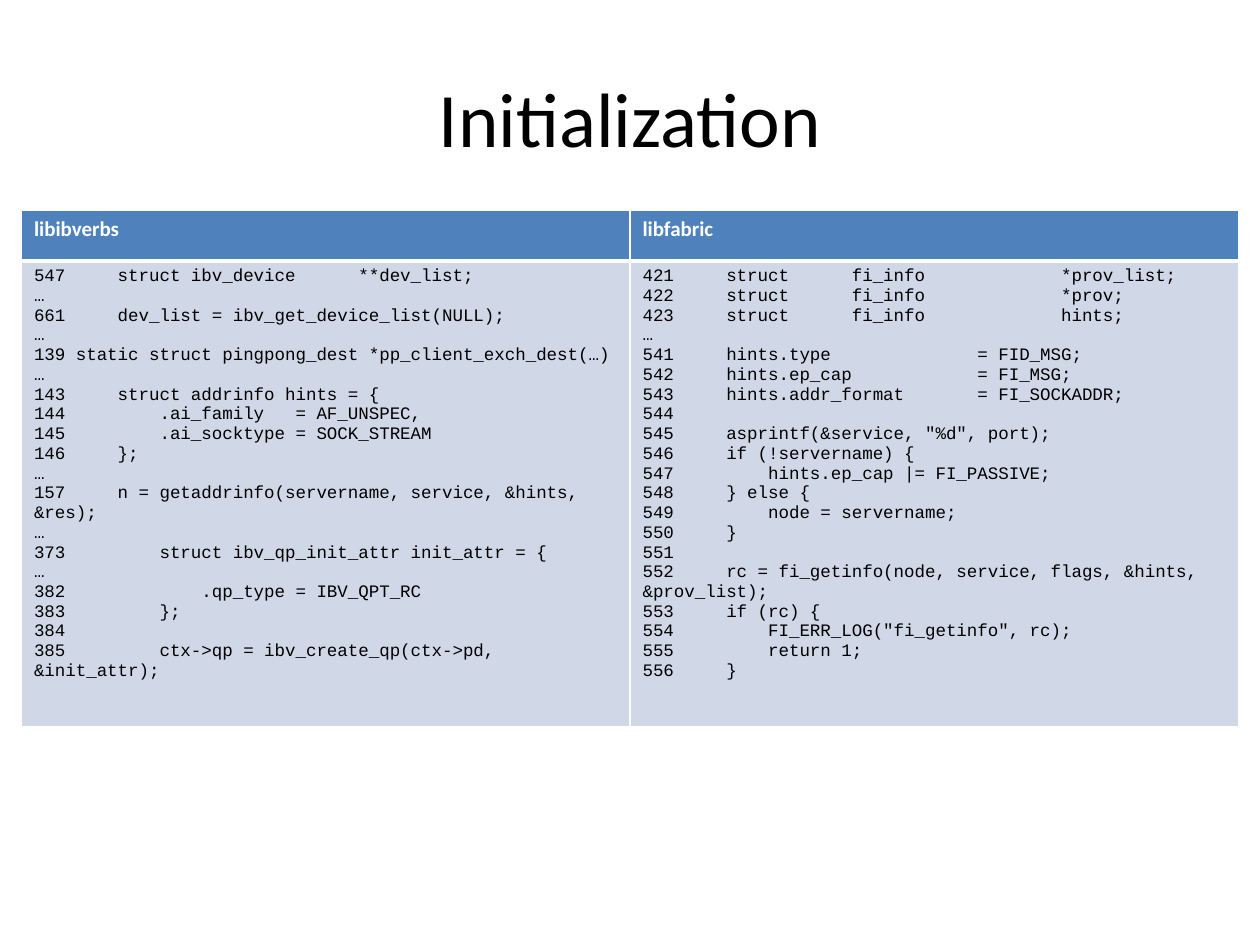
from pptx import Presentation
from pptx.dml.color import RGBColor
from pptx.enum.text import MSO_ANCHOR, PP_ALIGN
from pptx.oxml.ns import qn
from pptx.util import Inches, Pt
from lxml import etree

MIDDLE = MSO_ANCHOR.MIDDLE
CENTER = PP_ALIGN.CENTER
TITLE_ONLY = 5

COLORS = {
    "text": "000000",
    "white": "FFFFFF",
    "header": "4F81BD",
    "body": "D0D8E8",
}
TITLE_FORMAT = {"name": "Calibri", "size": Pt(44), "bold": False}
HEADER_FORMAT = {"name": "Calibri", "size": Pt(12), "bold": True}
CODE_FORMAT = {"name": "Courier New", "size": Pt(10), "bold": False}

VERBS_CODE = """547     struct ibv_device      **dev_list;
…
661     dev_list = ibv_get_device_list(NULL);
…
139 static struct pingpong_dest *pp_client_exch_dest(…)
…
143     struct addrinfo hints = {
144         .ai_family   = AF_UNSPEC,
145         .ai_socktype = SOCK_STREAM
146     };
…
157     n = getaddrinfo(servername, service, &hints, &res);
…
373         struct ibv_qp_init_attr init_attr = {
…
382             .qp_type = IBV_QPT_RC
383         };
384
385         ctx->qp = ibv_create_qp(ctx->pd, &init_attr);"""

FABRIC_CODE = """421     struct      fi_info             *prov_list;
422     struct      fi_info             *prov;
423     struct      fi_info             hints;
…
541     hints.type              = FID_MSG;
542     hints.ep_cap            = FI_MSG;
543     hints.addr_format       = FI_SOCKADDR;
544
545     asprintf(&service, "%d", port);
546     if (!servername) {
547         hints.ep_cap |= FI_PASSIVE;
548     } else {
549         node = servername;
550     }
551
552     rc = fi_getinfo(node, service, flags, &hints, &prov_list);
553     if (rc) {
554         FI_ERR_LOG("fi_getinfo", rc);
555         return 1;
556     }"""

ROWS = [
    {"texts": ["libibverbs", "libfabric"], "height": 0.4, "fill": "header",
     "color": "white", "format": HEADER_FORMAT,
     "borders": {"lnL": 1, "lnR": 1, "lnT": 1, "lnB": 3}},
    {"texts": [VERBS_CODE, FABRIC_CODE], "height": 3.7, "fill": "body",
     "color": "text", "format": CODE_FORMAT,
     "borders": {"lnL": 1, "lnR": 1, "lnT": 3, "lnB": 1}},
]


def write_text(frame, text, format_values, color):
    frame.text = text
    for para in frame.paragraphs:
        for span in para.runs:
            for name, value in format_values.items():
                setattr(span.font, name, value)
            span.font.color.rgb = RGBColor.from_string(COLORS[color])


def add_borders(cell, borders):
    properties = cell._tc.get_or_add_tcPr()
    for side, width in borders.items():
        line = etree.SubElement(properties, qn(f"a:{side}"), w=str(Pt(width)))
        fill = etree.SubElement(line, qn("a:solidFill"))
        etree.SubElement(fill, qn("a:srgbClr"), val=COLORS["white"])


deck = Presentation()
deck.slide_width, deck.slide_height = Inches(10), Inches(7.5)
page = deck.slides.add_slide(deck.slide_layouts[TITLE_ONLY])

title = page.shapes.title
title.left, title.top = Inches(0.5), Inches(0.3)
title.width, title.height = Inches(9), Inches(1.25)
title.text_frame.vertical_anchor = MIDDLE
write_text(title.text_frame, "Initialization", TITLE_FORMAT, "text")
title.text_frame.paragraphs[0].alignment = CENTER

table_height = sum(row["height"] for row in ROWS)
table = page.shapes.add_table(
    len(ROWS), 2, Inches(0.17), Inches(1.67), Inches(9.66), Inches(table_height)
).table
for column in table.columns:
    column.width = Inches(4.83)

for row_index, row in enumerate(ROWS):
    table.rows[row_index].height = Inches(row["height"])
    for column_index, text in enumerate(row["texts"]):
        cell = table.cell(row_index, column_index)
        add_borders(cell, row["borders"])
        cell.fill.solid()
        cell.fill.fore_color.rgb = RGBColor.from_string(COLORS[row["fill"]])
        write_text(cell.text_frame, text, row["format"], row["color"])

deck.save("out.pptx")
